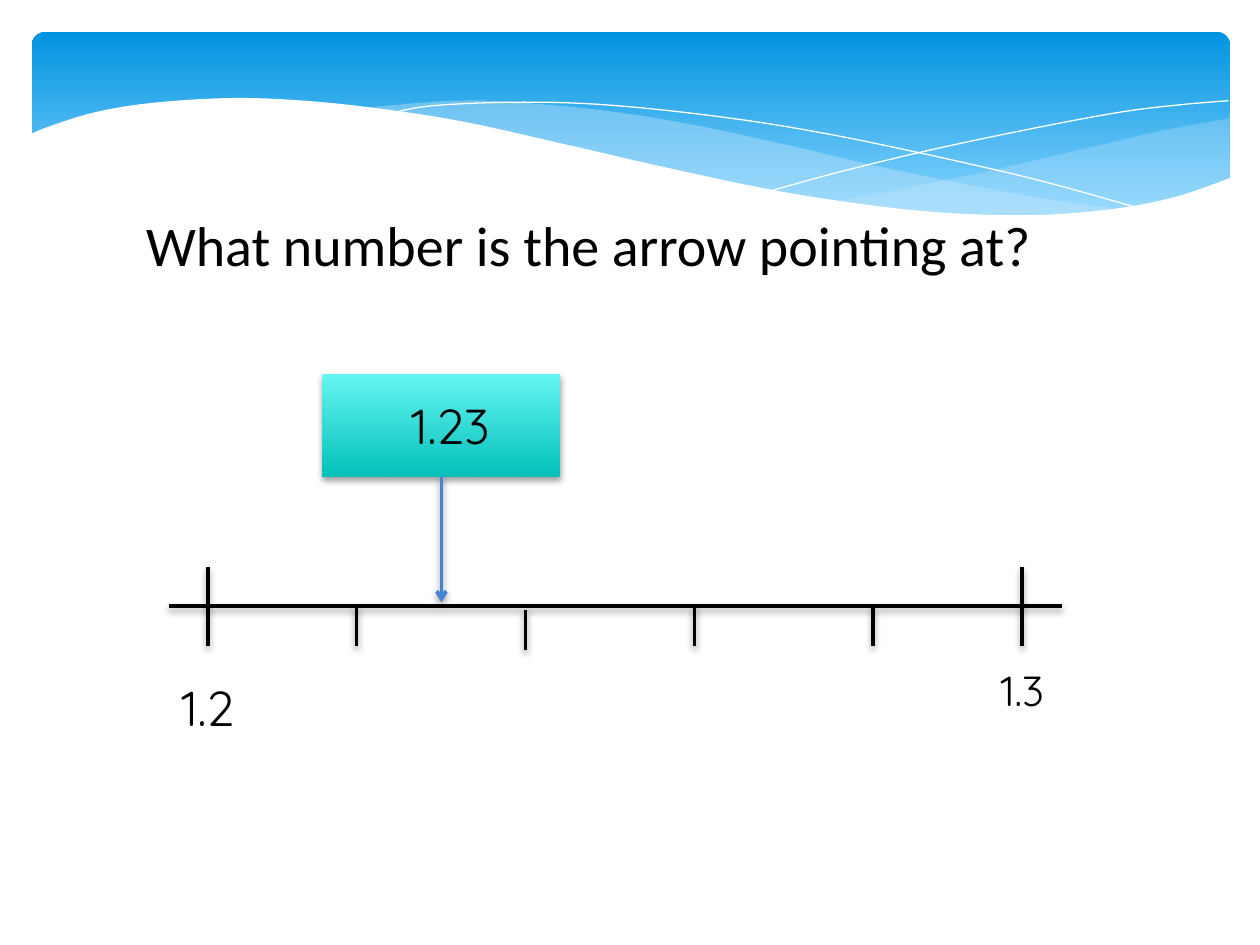
import dataclasses

import lxml.etree
import pptx
import pptx.dml.color
import pptx.enum.shapes
import pptx.enum.text
import pptx.oxml.ns
import pptx.util

Cm = pptx.util.Cm
Pt = pptx.util.Pt
qn = pptx.oxml.ns.qn


@dataclasses.dataclass(frozen=True)
class Theme:
    ink: str = "000000"
    paper: str = "FFFFFF"
    swell: str = "C6E7FC"
    arrow: str = "4584D3"
    band: tuple = ("0293E0", "83D3FE")
    answer: tuple = ("65F5F1", "04C0BB")
    title_font: str = "Calibri"
    label_font: str = "Quicksand"
    title_size: int = 32
    label_size: int = 28
    small_size: int = 24
    line_width: int = 2


def rgb(value):
    return pptx.dml.color.RGBColor.from_string(value)


def smooth(points, steps=6):
    """Points of a Catmull-Rom curve through the given points."""
    padded = [points[0], *points, points[-1]]
    curve = [points[0]]
    for a, b, c, d in zip(padded, padded[1:], padded[2:], padded[3:]):
        for step in range(1, steps + 1):
            t = step / steps
            curve.append(tuple(
                0.5 * (2 * q + (r - p) * t + (2 * p - 5 * q + 4 * r - s) * t**2
                       + (3 * q - p - 3 * r + s) * t**3)
                for p, q, r, s in zip(a, b, c, d)))
    return curve


class SlideBuilder:
    """Holds the theme and the current slide; all lengths are centimetres."""

    def __init__(self, slide, theme):
        self.slide = slide
        self.theme = theme

    def add_shadow(self, shape):
        properties = shape.element.spPr
        for old in properties.findall(qn("a:effectLst")):
            properties.remove(old)
        effects = lxml.etree.SubElement(properties, qn("a:effectLst"))
        shadow = lxml.etree.SubElement(
            effects, qn("a:outerShdw"), blurRad=str(Pt(4)), dist=str(Pt(2)),
            dir="5400000", rotWithShape="0")
        color = lxml.etree.SubElement(shadow, qn("a:srgbClr"), val=self.theme.ink)
        lxml.etree.SubElement(color, qn("a:alpha"), val="38000")

    def add_gradient_box(self, kind, box, colors, last_stop=1.0):
        shape = self.slide.shapes.add_shape(kind, *map(Cm, box))
        shape.shadow.inherit = False
        shape.line.fill.background()
        shape.fill.gradient()
        shape.fill.gradient_angle = 270
        stops = shape.fill.gradient_stops
        for stop, color in zip(stops, colors):
            stop.color.rgb = rgb(color)
        stops[0].position, stops[1].position = 0, last_stop
        return shape

    def add_outline(self, points, color=None, opacity=100):
        """A filled area, or an open hairline when no colour is given."""
        start, *rest = [(Cm(x), Cm(y)) for x, y in points]
        builder = self.slide.shapes.build_freeform(*start)
        builder.add_line_segments(rest, close=color is not None)
        shape = builder.convert_to_shape()
        shape.shadow.inherit = False
        if color is None:
            shape.fill.background()
            shape.line.color.rgb = rgb(self.theme.paper)
            shape.line.width = Pt(0)
            return
        shape.line.fill.background()
        shape.fill.solid()
        shape.fill.fore_color.rgb = rgb(color)
        if opacity < 100:
            fill = shape.element.spPr.find(qn("a:solidFill"))
            lxml.etree.SubElement(fill[0], qn("a:alpha"), val=str(opacity * 1000))

    def add_line(self, x1, y1, x2, y2, color=None, arrow=False):
        line = self.slide.shapes.add_connector(
            pptx.enum.shapes.MSO_CONNECTOR.STRAIGHT, Cm(x1), Cm(y1), Cm(x2), Cm(y2))
        line.line.color.rgb = rgb(color or self.theme.ink)
        line.line.width = Pt(self.theme.line_width)
        if arrow:
            outline = line.element.spPr.find(qn("a:ln"))
            lxml.etree.SubElement(outline, qn("a:tailEnd"), type="arrow")
        self.add_shadow(line)
        return line

    def add_text(self, shape, text, font, size, alignment):
        frame = shape.text_frame
        frame.vertical_anchor = pptx.enum.text.MSO_ANCHOR.TOP
        paragraph = frame.paragraphs[0]
        paragraph.alignment = alignment
        run = paragraph.add_run()
        run.text = text
        run.font.name = font
        run.font.size = Pt(size)
        run.font.color.rgb = rgb(self.theme.ink)

    def add_title(self, text, box):
        title = self.slide.shapes.title
        title.left, title.top, title.width, title.height = map(Cm, box)
        title.text_frame.auto_size = pptx.enum.text.MSO_AUTO_SIZE.NONE
        self.add_text(title, text, self.theme.title_font, self.theme.title_size,
                      pptx.enum.text.PP_ALIGN.LEFT)
        # Bring the title in front of the wave
        title.element.getparent().append(title.element)

    def add_label(self, text, box, size, wrap=True):
        label = self.slide.shapes.add_textbox(*map(Cm, box))
        label.text_frame.word_wrap = wrap
        self.add_text(label, text, self.theme.label_font, size,
                      pptx.enum.text.PP_ALIGN.CENTER)


def draw_header(builder, theme):
    shapes = pptx.enum.shapes.MSO_SHAPE
    band = builder.add_gradient_box(
        shapes.ROUNDED_RECTANGLE, (0.64, 0.64, 24.16, 3.96), theme.band, 0.9)
    band.adjustments[0] = 0.07

    # Translucent swells: upper edge, then lower edge
    right_swell = (
        smooth([(24.79, 2.39), (23.39, 2.64), (21.87, 3), (19.79, 3.48),
                (17.93, 3.86), (16.79, 4.06)])
        + smooth([(16.79, 4.06), (17.91, 4.19), (19.23, 4.32), (20.68, 4.37),
                  (22.15, 4.29), (23.39, 4.06), (24.79, 3.58)]))
    centre_swell = (
        smooth([(22.68, 4.24), (20.5, 3.91), (17.93, 3.4), (15.98, 2.95),
                (14.1, 2.54), (12.42, 2.26), (10.67, 2.08), (9.17, 2.03), (7.26, 2.18)])
        + smooth([(7.26, 2.18), (9.19, 2.46), (11.4, 2.95), (14.38, 3.63),
                  (16.51, 4.01), (18.34, 4.27), (20.22, 4.39), (21.54, 4.37),
                  (22.68, 4.24)]))
    builder.add_outline(right_swell, theme.swell, 29)
    builder.add_outline(centre_swell, theme.swell, 40)

    # Crossing hairlines
    builder.add_outline(smooth([
        (7.85, 2.29), (8.74, 2.13), (10.57, 2.06), (12.42, 2.13), (14.78, 2.39),
        (16.89, 2.74), (19.3, 3.25), (21.11, 3.68), (23.04, 4.22)]))
    builder.add_outline(smooth([
        (15.57, 3.84), (17.07, 3.43), (19, 2.97), (21.23, 2.51), (22.73, 2.24),
        (23.83, 2.11), (24.77, 2.03)]))

    # White wave that cuts off the band
    wave = smooth([
        (24.82, 3.58), (23.62, 3.99), (22.23, 4.24), (20.55, 4.34), (18.44, 4.24),
        (15.9, 3.89), (13.44, 3.38), (11.35, 2.9), (9.27, 2.44), (7.42, 2.16),
        (5.84, 2.01), (4.5, 1.98), (3.02, 2.08), (1.93, 2.26), (1.02, 2.54),
        (0.58, 2.72)])
    builder.add_outline(wave + [(0.58, 5.69), (24.82, 5.69)], theme.paper)


def draw_number_line(builder, theme):
    axis = 12.22
    builder.add_line(3.4, axis, 21.41, axis)
    for x in (4.19, 20.6):
        builder.add_line(x, axis - 0.8, x, axis + 0.8)
    for x, drop in ((7.19, 0), (10.59, 0.08), (14, 0), (17.6, 0)):
        builder.add_line(x, axis + drop, x, axis + drop + 0.8)

    # Answer box with its arrow
    left, top, width, height = box = (6.5, 7.54, 4.8, 2.08)
    answer = builder.add_gradient_box(
        pptx.enum.shapes.MSO_SHAPE.RECTANGLE, box, theme.answer)
    builder.add_shadow(answer)
    middle = left + width / 2
    arrow = builder.add_line(middle, top + height, middle, axis - 0.08,
                             theme.arrow, arrow=True)
    arrow.begin_connect(answer, 2)

    # Labels
    builder.add_label("1.2", (2.69, 13.54, 3, 1.45), theme.label_size)
    builder.add_label("1.3", (19.71, 13.28, 1.8, 1.27), theme.small_size, wrap=False)
    builder.add_label("1.23", (7.19, 7.85, 3.78, 1.45), theme.label_size)


def main():
    theme = Theme()
    presentation = pptx.Presentation()
    presentation.slide_width, presentation.slide_height = Cm(25.4), Cm(19.05)
    slide = presentation.slides.add_slide(presentation.slide_layouts[5])
    builder = SlideBuilder(slide, theme)
    draw_header(builder, theme)
    builder.add_title("What number is the arrow pointing at?", (2.69, 4.11, 19.41, 1.63))
    draw_number_line(builder, theme)
    presentation.save("out.pptx")


if __name__ == "__main__":
    main()
